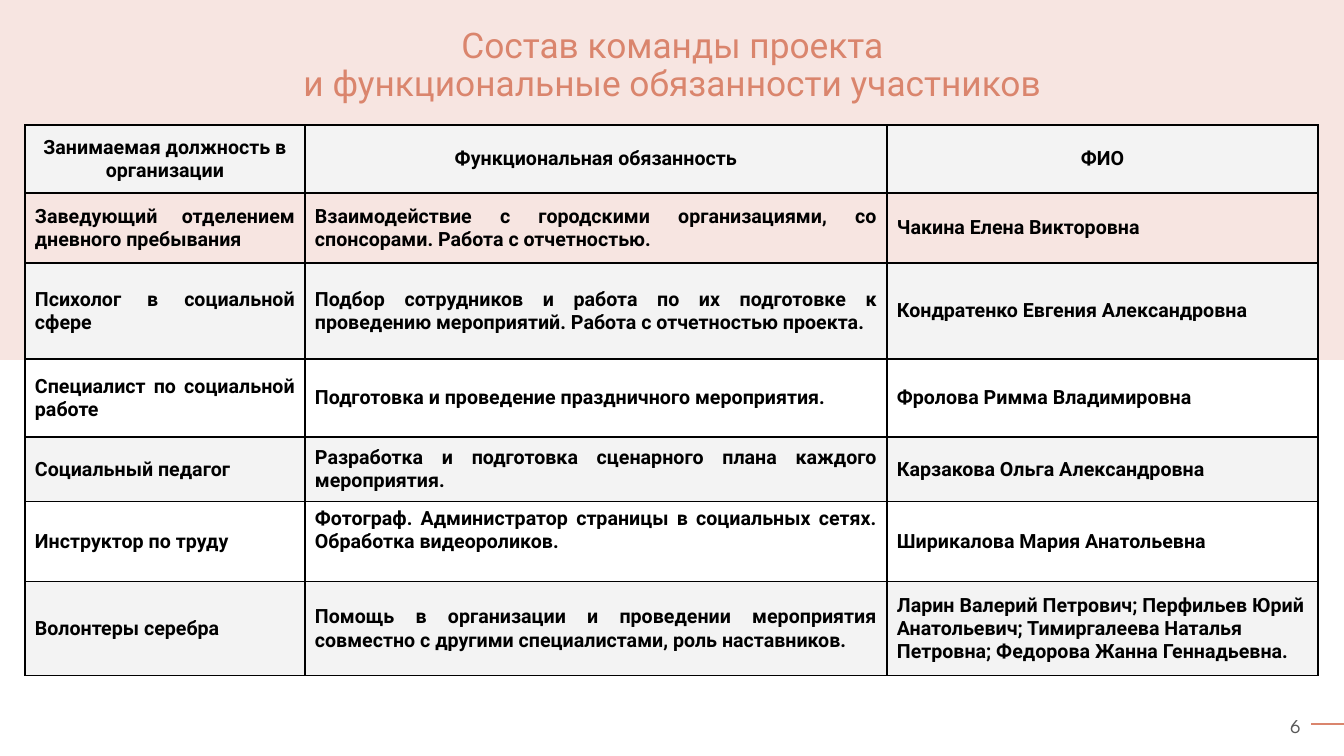
from lxml import etree
from pptx import Presentation
from pptx import util as u
from pptx.dml.color import RGBColor
from pptx.enum import shapes, text
from pptx.oxml.ns import qn

PINK = RGBColor(0xF7, 0xE5, 0xE1)
CORAL = RGBColor(0xDA, 0x85, 0x6D)
GRAY = RGBColor(0xF3, 0xF3, 0xF3)
DARK_GRAY = RGBColor(0x59, 0x59, 0x59)
BLACK = RGBColor(0, 0, 0)

SLIDE_WIDTH, SLIDE_HEIGHT = 1344, 756
TITLE = "Состав команды проекта\vи функциональные обязанности участников"
PAGE_NUMBER = "6"
TEAM = [
    ("Занимаемая должность в организации", "Функциональная обязанность", "ФИО"),
    ("Заведующий отделением дневного пребывания",
     "Взаимодействие с городскими организациями, со спонсорами. Работа с отчетностью.",
     "Чакина Елена Викторовна"),
    ("Психолог в социальной сфере",
     "Подбор сотрудников и работа по их подготовке к проведению мероприятий. "
     "Работа с отчетностью проекта.",
     "Кондратенко Евгения Александровна"),
    ("Специалист по социальной работе",
     "Подготовка и проведение праздничного мероприятия.",
     "Фролова Римма Владимировна"),
    ("Социальный педагог",
     "Разработка и подготовка сценарного плана каждого мероприятия.",
     "Карзакова Ольга Александровна"),
    ("Инструктор по труду",
     "Фотограф. Администратор страницы в социальных сетях. Обработка видеороликов.",
     "Ширикалова Мария Анатольевна"),
    ("Волонтеры серебра",
     "Помощь в организации и проведении мероприятия совместно с другими "
     "специалистами, роль наставников.",
     "Ларин Валерий Петрович; Перфильев Юрий Анатольевич; Тимиргалеева Наталья "
     "Петровна; Федорова Жанна Геннадьевна."),
]
COLUMN_WIDTHS = [280, 582, 431]
ROW_HEIGHTS = [68, 70, 96, 78, 65, 80, 94]
TOP_ALIGNED_CELL = (5, 1)

TITLE_FONT = {"name": "Roboto", "size": u.Pt(25.2), "bold": False}
CELL_FONT = {"name": "Roboto", "size": u.Pt(14), "bold": True}
NUMBER_FONT = {"name": "League Spartan", "size": u.Pt(14)}
MARGINS = {"margin_left": 10, "margin_right": 10, "margin_top": 5, "margin_bottom": 5}


def px(length):
    return u.Emu(round(length * 914400 / 100.8))


def set_margins(target):
    for name, length in MARGINS.items():
        setattr(target, name, px(length))


def format_text(paragraph, font_format, color, alignment):
    paragraph.alignment = alignment
    for run in paragraph.runs:
        for name, value in font_format.items():
            setattr(run.font, name, value)
        run.font.color.rgb = color


def add_borders(cell):
    """Put a thin black line on all sides, ahead of the fill in the cell properties."""
    properties = cell._tc.get_or_add_tcPr()
    for index, side in enumerate(("a:lnL", "a:lnR", "a:lnT", "a:lnB")):
        line = etree.Element(qn(side), w=str(u.Pt(1)))
        fill = etree.SubElement(line, qn("a:solidFill"))
        etree.SubElement(fill, qn("a:srgbClr"), val=str(BLACK))
        properties.insert(index, line)


def add_background(slide):
    band = slide.shapes.add_shape(
        shapes.MSO_SHAPE.RECTANGLE, 0, 0, px(SLIDE_WIDTH), px(360))
    band.shadow.inherit = False
    band.fill.solid()
    band.fill.fore_color.rgb = PINK
    band.line.fill.background()
    slide.shapes.title.element.addprevious(band.element)


def fill_title(slide):
    title = slide.shapes.title
    title.left, title.top, title.width, title.height = map(px, (93, 24, 1159, 84))
    frame = title.text_frame
    frame.text = TITLE
    frame.word_wrap = True
    frame.auto_size = text.MSO_AUTO_SIZE.NONE
    frame.vertical_anchor = text.MSO_ANCHOR.MIDDLE
    set_margins(frame)
    frame.paragraphs[0].line_spacing = 0.9
    format_text(frame.paragraphs[0], TITLE_FONT, CORAL, text.PP_ALIGN.CENTER)


def add_team_table(slide):
    table = slide.shapes.add_table(
        len(TEAM), len(COLUMN_WIDTHS), px(25), px(125),
        px(sum(COLUMN_WIDTHS)), px(sum(ROW_HEIGHTS))).table
    table.first_row = table.horz_banding = False
    for column, width in zip(table.columns, COLUMN_WIDTHS):
        column.width = px(width)
    for row, height in zip(table.rows, ROW_HEIGHTS):
        row.height = px(height)

    body_alignments = [text.PP_ALIGN.JUSTIFY, text.PP_ALIGN.JUSTIFY, text.PP_ALIGN.LEFT]
    for row_index, member in enumerate(TEAM):
        for column_index, content in enumerate(member):
            cell = table.cell(row_index, column_index)
            cell.text = content
            set_margins(cell)
            at_top = (row_index, column_index) == TOP_ALIGNED_CELL
            cell.vertical_anchor = text.MSO_ANCHOR.TOP if at_top else text.MSO_ANCHOR.MIDDLE
            if row_index % 2 == 0:
                cell.fill.solid()
                cell.fill.fore_color.rgb = GRAY
            else:
                cell.fill.background()
            add_borders(cell)
            alignment = body_alignments[column_index] if row_index else text.PP_ALIGN.CENTER
            format_text(cell.text_frame.paragraphs[0], CELL_FONT, BLACK, alignment)


def add_page_number(slide):
    line = slide.shapes.add_connector(
        shapes.MSO_CONNECTOR.STRAIGHT, px(SLIDE_WIDTH), px(724), px(1311), px(724))
    line.line.color.rgb = CORAL
    line.line.width = u.Pt(1.5)
    etree.SubElement(line.element.spPr, qn("a:effectLst"))

    frame = slide.shapes.add_textbox(px(1227), px(709), px(84), px(35)).text_frame
    frame.text = PAGE_NUMBER
    frame.word_wrap = True
    set_margins(frame)
    format_text(frame.paragraphs[0], NUMBER_FONT, DARK_GRAY, text.PP_ALIGN.RIGHT)


def main():
    presentation = Presentation()
    presentation.slide_width = px(SLIDE_WIDTH)
    presentation.slide_height = px(SLIDE_HEIGHT)
    slide = presentation.slides.add_slide(presentation.slide_layouts[5])
    add_background(slide)
    fill_title(slide)
    add_team_table(slide)
    add_page_number(slide)
    presentation.save("out.pptx")


if __name__ == "__main__":
    main()
